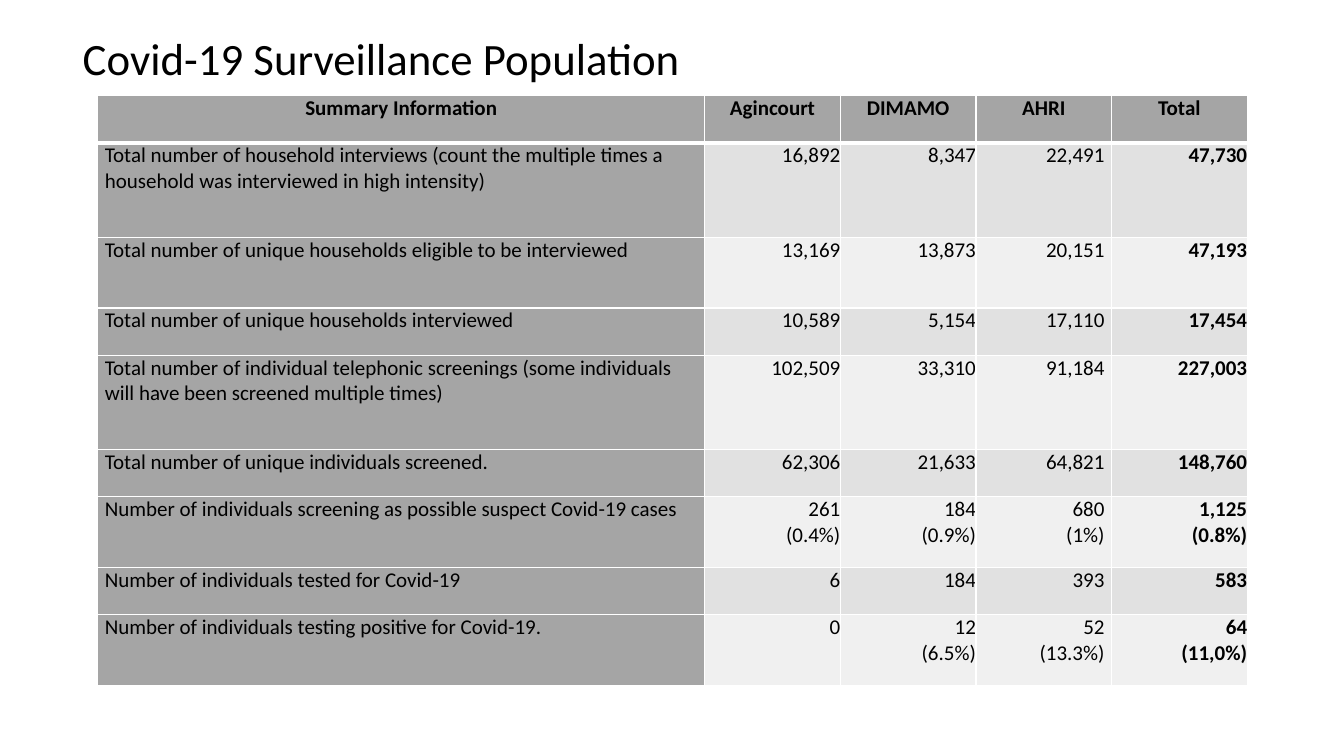
from lxml.etree import SubElement
from pptx import Presentation
from pptx.dml.color import RGBColor
from pptx.enum.text import MSO_ANCHOR, MSO_AUTO_SIZE, PP_ALIGN
from pptx.oxml.ns import qn
from pptx.util import Inches, Pt


def color(code):
    return RGBColor.from_string(code)


def border(cell, side, width):
    line = SubElement(cell._tc.get_or_add_tcPr(), qn(f"a:ln{side}"), w=str(Pt(width)))
    SubElement(SubElement(line, qn("a:solidFill")), qn("a:srgbClr"), val="FFFFFF")


FONT = "Calibri"
UNIT = 0.234  # row heights are multiples of this
LABEL, SITE = 6.02, 1.345
HEAD = ["Summary Information", "Agincourt", "DIMAMO", "AHRI", "Total"]
ROWS = [
    (2, HEAD),
    (4, ["Total number of household interviews (count the multiple times a "
         "household was interviewed in high intensity)",
         "16,892", "8,347", "22,491", "47,730"]),
    (3, ["Total number of unique households eligible to be interviewed",
         "13,169", "13,873", "20,151", "47,193"]),
    (2, ["Total number of unique households interviewed",
         "10,589", "5,154", "17,110", "17,454"]),
    (4, ["Total number of individual telephonic screenings (some individuals "
         "will have been screened multiple times)",
         "102,509", "33,310", "91,184", "227,003"]),
    (2, ["Total number of unique individuals screened.",
         "62,306", "21,633", "64,821", "148,760"]),
    (3, ["Number of individuals screening as possible suspect Covid-19 cases",
         "261\n(0.4%)", "184\n(0.9%)", "680\n(1%)", "1,125\n(0.8%)"]),
    (2, ["Number of individuals tested for Covid-19",
         "6", "184", "393", "583"]),
    (3, ["Number of individuals testing positive for Covid-19.",
         "0", "12\n(6.5%)", "52\n(13.3%)", "64\n(11,0%)"]),
]

deck = Presentation()
deck.slide_width, deck.slide_height = Inches(13.33), Inches(7.5)
slide = deck.slides.add_slide(deck.slide_layouts[5])

title = slide.shapes.title
title.left, title.top = Inches(0.72), Inches(0.25)
title.width, title.height = Inches(6.19), Inches(0.64)
frame = title.text_frame
frame.text = "Covid-19 Surveillance Population"
frame.word_wrap = False
frame.auto_size = MSO_AUTO_SIZE.SHAPE_TO_FIT_TEXT
frame.vertical_anchor = MSO_ANCHOR.TOP
para = frame.paragraphs[0]
para.alignment = PP_ALIGN.LEFT
para.font.name, para.font.size = FONT, Pt(32)
para.font.color.rgb = color("000000")

height = UNIT * sum(units for units, _ in ROWS)
table = slide.shapes.add_table(
    len(ROWS), len(HEAD), Inches(0.97), Inches(0.95),
    Inches(LABEL + 4 * SITE), Inches(height)).table
table.first_row = table.horz_banding = False
for c, col in enumerate(table.columns):
    col.width = Inches(SITE if c else LABEL)

for r, (units, texts) in enumerate(ROWS):
    table.rows[r].height = Inches(UNIT * units)
    for c, text in enumerate(texts):
        cell = table.cell(r, c)
        cell.text = text
        cell.margin_left = cell.margin_right = Inches(0.07 if c in (0, 3) else 0)
        cell.margin_top = cell.margin_bottom = 0
        for side in "LRTB":
            thick = (r, side) in ((0, "B"), (1, "T"))
            border(cell, side, 3 if thick else 1)
        cell.fill.solid()
        body = "E1E1E1" if r % 2 else "F0F0F0"
        cell.fill.fore_color.rgb = color("A5A5A5" if r == 0 or c == 0 else body)
        for para in cell.text_frame.paragraphs:
            if r == 0:
                para.alignment = PP_ALIGN.CENTER
            else:
                para.alignment = PP_ALIGN.RIGHT if c else PP_ALIGN.LEFT
            para.font.name, para.font.size = FONT, Pt(15)
            para.font.bold = r == 0 or c == 4
            para.font.color.rgb = color("000000")

deck.save("out.pptx")
